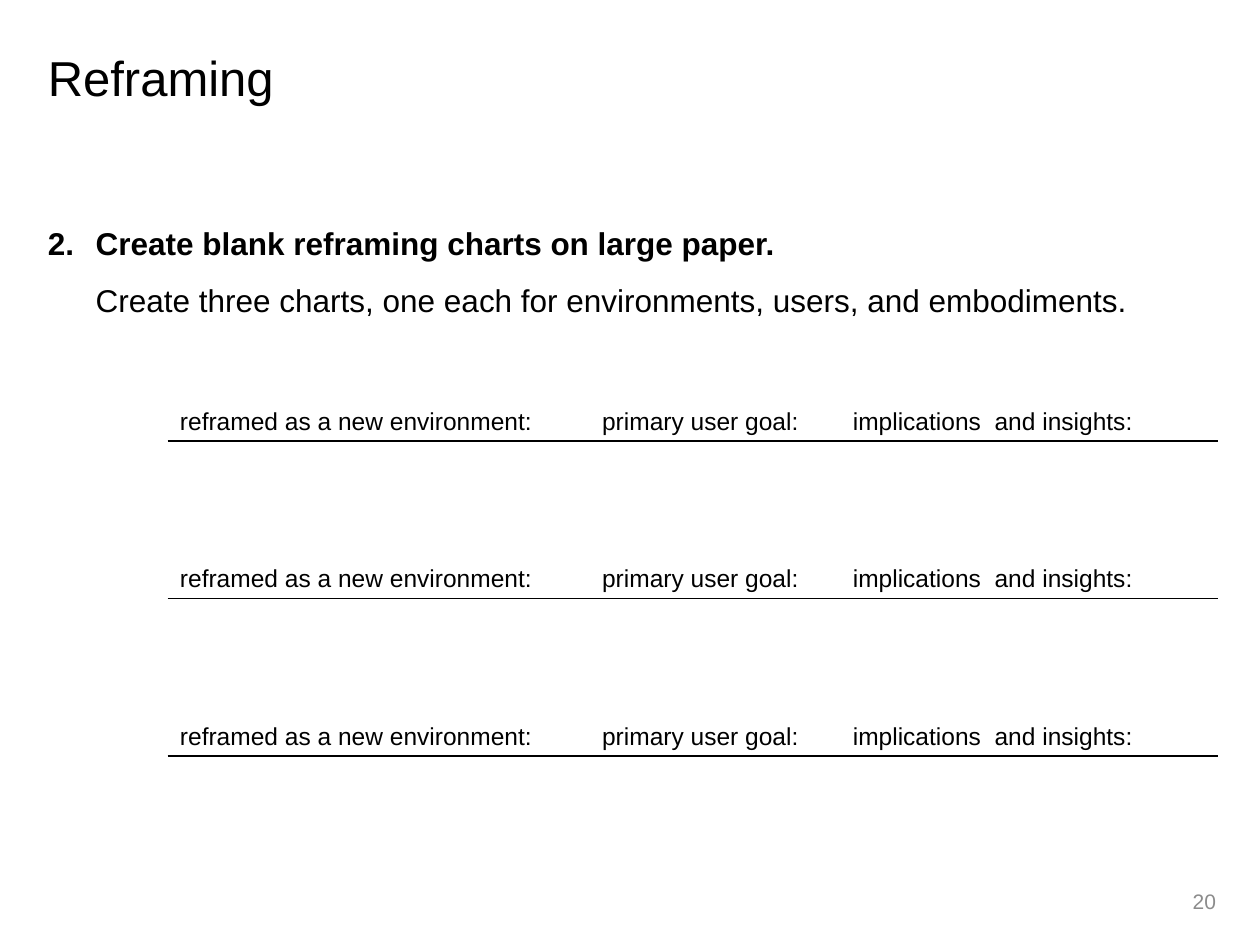
from lxml import etree
from pptx import Presentation
from pptx.dml.color import RGBColor
from pptx.enum import shapes, text
from pptx.oxml import ns
from pptx.util import Inches, Pt

COLORS = {"ink": "000000", "page_number": "8C8C8C", "background": "FFFFFF"}
FONT = "Arial"
COLUMNS = [
    ("reframed as a new environment:", 1.33, 3.58),
    ("primary user goal:", 4.68, 2.15),
    ("implications  and insights:", 6.67, 3.08),
]
CHART_TOPS = [3.17 + 1.25 * row for row in range(3)]
RULE_LEFT, RULE_RIGHT, RULE_DROP = 1.33, 9.67, 0.33


def style(para, size, color="ink", bold=False, align=text.PP_ALIGN.LEFT):
    para.alignment = align
    para.font.name = FONT
    para.font.size = Pt(size)
    para.font.bold = bold
    para.font.color.rgb = RGBColor.from_string(COLORS[color])


def prepare(shape, left, top, width, height, anchor=text.MSO_ANCHOR.TOP):
    """Place a text shape and return its first paragraph."""
    shape.left, shape.top = Inches(left), Inches(top)
    shape.width, shape.height = Inches(width), Inches(height)
    frame = shape.text_frame
    frame.word_wrap = True
    frame.auto_size = text.MSO_AUTO_SIZE.NONE
    frame.vertical_anchor = anchor
    return frame.paragraphs[0]


def add_text(page, words, left, top, width, height, size,
             anchor=text.MSO_ANCHOR.TOP, **look):
    box = page.shapes.add_textbox(0, 0, 0, 0)
    para = prepare(box, left, top, width, height, anchor)
    para.add_run().text = words
    style(para, size, **look)


def number_paragraph(para, start, indent):
    props = para._p.get_or_add_pPr()
    props.set("marL", str(Inches(indent)))
    props.set("indent", str(-Inches(indent)))
    etree.SubElement(props, ns.qn("a:buFont"), typeface="+mj-lt")
    etree.SubElement(props, ns.qn("a:buAutoNum"), type="arabicPeriod", startAt=str(start))


def fill_title(page):
    para = prepare(page.shapes.title, 0.28, 0.33, 9.47, 1.08)
    para.add_run().text = "Reframing"
    style(para, 28)


def fill_step(page):
    para = prepare(page.placeholders[1], 0.28, 1.58, 9.47, 5.17)
    para.line_spacing = 1.5
    para.space_before = Pt(0)
    number_paragraph(para, start=2, indent=0.38)
    para.add_run().text = "Create blank reframing charts on large paper."
    para.add_line_break()
    detail = para.add_run()
    detail.text = "Create three charts, one each for environments, users, and embodiments."
    detail.font.bold = False
    style(para, 18, bold=True)


def add_rule(page, y):
    rule = page.shapes.add_connector(
        shapes.MSO_CONNECTOR.STRAIGHT,
        Inches(RULE_LEFT), Inches(y), Inches(RULE_RIGHT), Inches(y))
    rule.line.color.rgb = RGBColor.from_string(COLORS["ink"])
    rule.line.width = Pt(0.75)
    etree.SubElement(rule._element.spPr, ns.qn("a:effectLst"))


def add_blank_chart(page, top):
    """Add one row of column headings with a rule beneath."""
    for heading, left, width in COLUMNS:
        add_text(page, heading, left, top, width, 0.5, 14)
    add_rule(page, top + RULE_DROP)


def main():
    deck = Presentation()
    deck.slide_width, deck.slide_height = Inches(10), Inches(7.5)
    page = deck.slides.add_slide(deck.slide_layouts[1])
    page.background.fill.solid()
    page.background.fill.fore_color.rgb = RGBColor.from_string(COLORS["background"])
    fill_title(page)
    fill_step(page)
    for top in CHART_TOPS:
        add_blank_chart(page, top)
    add_text(page, "20", 7.42, 6.95, 2.33, 0.4, 12, anchor=text.MSO_ANCHOR.MIDDLE,
             color="page_number", align=text.PP_ALIGN.RIGHT)
    deck.save("out.pptx")


if __name__ == "__main__":
    main()
